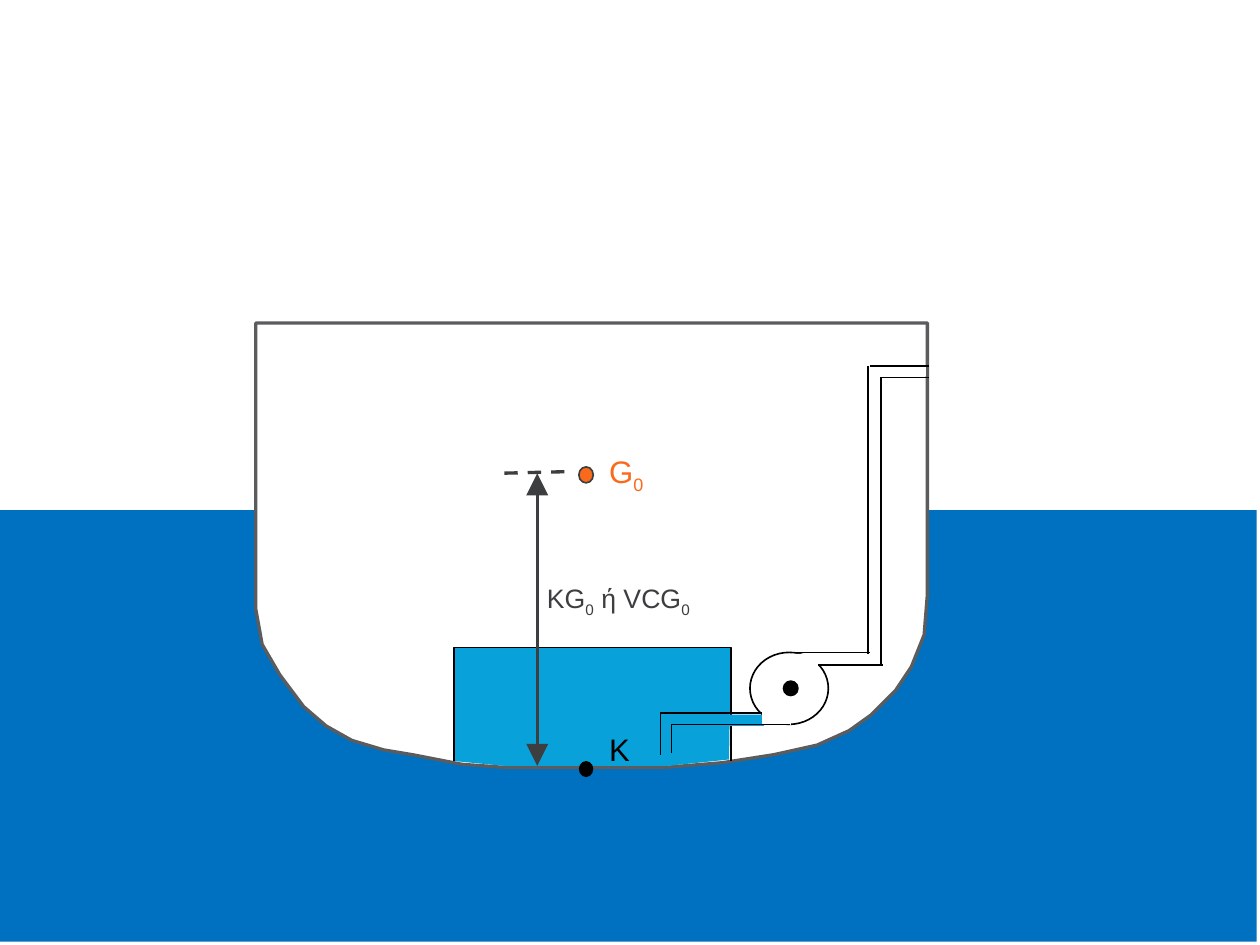
from lxml import etree
from pptx import Presentation
from pptx.dml.color import RGBColor
from pptx.enum import dml, shapes, text
from pptx.oxml import ns
from pptx.util import Inches, Pt

SEA = RGBColor(0x00, 0x70, 0xC0)
BALLAST = RGBColor(0x08, 0xA1, 0xD9)
HULL = RGBColor(0x5B, 0x5C, 0x5E)
DARK = RGBColor(0x3C, 0x3E, 0x3F)
ORANGE = RGBColor(0xF9, 0x6A, 0x1B)
BLACK = RGBColor(0x00, 0x00, 0x00)
WHITE = RGBColor(0xFF, 0xFF, 0xFF)
RECT, OVAL = shapes.MSO_SHAPE.RECTANGLE, shapes.MSO_SHAPE.OVAL

# Outlines, in inches
HULL_POINTS = [
    (1.6, 2.02), (1.6, 3.81), (1.64, 4.03), (1.75, 4.22), (1.9, 4.42), (2.04, 4.54),
    (2.2, 4.63), (2.4, 4.69), (2.58, 4.72), (2.89, 4.78), (3.17, 4.8), (4.15, 4.8),
    (4.52, 4.77), (4.84, 4.72), (5.11, 4.66), (5.31, 4.57), (5.45, 4.47), (5.6, 4.32),
    (5.7, 4.17), (5.78, 3.97), (5.8, 3.72), (5.8, 2.02)]
TANK_WALLS = [(2.84, 4.76), (2.84, 4.05), (4.57, 4.05), (4.57, 4.76)]
TANK_WATER = TANK_WALLS[:3] + [(4.56, 4.75), (4.18, 4.79), (3.15, 4.79)]

# Pump and pipes, back to front: masks cover the lines behind them
PUMP = [
    ("oval", (4.69, 4.08, 0.49, 0.45), WHITE, BLACK),
    ("oval", (4.9, 4.26, 0.09, 0.09), BLACK, BLACK),
    ("rect", (4.3, 4.47, 0.48, 0.07), BALLAST, None),
    ("line", (4.77, 4.46, 4.13, 4.46)),
    ("rect", (4.95, 4.09, 0.57, 0.06), WHITE, WHITE),
    ("line", (5.52, 4.16, 5.07, 4.16)),
    ("rect", (4.93, 4.09, 0.18, 0.12), WHITE, WHITE),
    ("line", (4.2, 4.71, 4.2, 4.53)),
    ("line", (4.13, 4.72, 4.13, 4.46)),
    ("rect", (5.44, 2.3, 0.06, 1.81), WHITE, WHITE),
    ("line", (5.43, 4.09, 5.43, 2.29)),
    ("line", (5.51, 4.16, 5.51, 2.36)),
    ("rect", (5.46, 2.29, 0.33, 0.06), WHITE, WHITE),
    ("line", (5.44, 4.08, 4.94, 4.08)),
    ("rect", (4.77, 4.43, 0.17, 0.1), WHITE, WHITE),
    ("line", (4.94, 4.53, 4.2, 4.53)),
]
OUTLETS = [(5.81, 2.29, 5.44, 2.29), (5.81, 2.36, 5.51, 2.36)]

# Labels as (wording, is subscript)
HEIGHT_LABEL = [("KG", False), ("0", True), (" ή VCG", False), ("0", True)]
GRAVITY_LABEL = [("G", False), ("0", True)]
KEEL_LABEL = [("K", False)]


def paint(shape, fill=None, line=None, width=0.75):
    shape.shadow.inherit = False
    if fill is None:
        shape.fill.background()
    else:
        shape.fill.solid()
        shape.fill.fore_color.rgb = fill
    if line is None:
        shape.line.fill.background()
    else:
        shape.line.color.rgb = line
        shape.line.width = Pt(width)


def add_block(target, kind, place, fill, line=None, width=0.75):
    block = target.add_shape(kind, *map(Inches, place))
    paint(block, fill, line, width)
    return block


def add_outline(target, points, closed=True, **style):
    corners = [(Inches(x), Inches(y)) for x, y in points]
    builder = target.build_freeform(*corners[0], scale=1.0)
    builder.add_line_segments(corners[1:], close=closed)
    paint(builder.convert_to_shape(), **style)


def add_line(target, ends, color=BLACK, width=0.75, dashed=False, arrows=False):
    line = target.add_connector(shapes.MSO_CONNECTOR.STRAIGHT, *map(Inches, ends))
    line.line.color.rgb = color
    line.line.width = Pt(width)
    if dashed:
        line.line.dash_style = dml.MSO_LINE.DASH
    if arrows:
        for end in ("a:headEnd", "a:tailEnd"):
            etree.SubElement(line.line._get_or_add_ln(), ns.qn(end),
                             type="triangle", w="lg", len="lg")
    etree.SubElement(line._element.spPr, ns.qn("a:effectLst"))


def add_label(target, spans, place, size, color, fill=None,
              anchor=text.MSO_ANCHOR.MIDDLE):
    if fill is None:
        box = target.add_textbox(*map(Inches, place))
    else:
        box = add_block(target, RECT, place, fill)
    frame = box.text_frame
    frame.word_wrap = False
    frame.vertical_anchor = anchor
    frame.margin_left = frame.margin_right = frame.margin_top = frame.margin_bottom = 0
    para = frame.paragraphs[0]
    para.alignment = text.PP_ALIGN.LEFT
    para.line_spacing = 0.85
    para.space_before = Pt(0.3 * size)
    for wording, subscript in spans:
        span = para.add_run()
        span.text = wording
        span.font.name = "Arial"
        span.font.size = Pt(size)
        span.font.color.rgb = color
        if subscript:
            span._r.get_or_add_rPr().set("baseline", "-25000")


def main():
    deck = Presentation()
    deck.slide_width, deck.slide_height = Inches(7.88), Inches(5.91)
    page = deck.slides.add_slide(deck.slide_layouts[6]).shapes

    # Sea, hull and ballast tank
    add_block(page, RECT, (0, 3.19, 7.86, 2.7), SEA)
    add_outline(page, HULL_POINTS, fill=WHITE, line=HULL, width=1.5)
    add_outline(page, TANK_WATER, fill=BALLAST)
    add_outline(page, TANK_WALLS, closed=False, line=BLACK)

    # Pump with its pipes
    pump = page.add_group_shape().shapes
    for kind, place, *colors in PUMP:
        if kind == "line":
            add_line(pump, place)
        else:
            width = 0.25 if kind == "rect" else 0.75
            add_block(pump, OVAL if kind == "oval" else RECT, place, *colors, width)

    # Centre of gravity and its height above the keel
    add_block(page, OVAL, (3.62, 2.92, 0.09, 0.1), ORANGE, DARK)
    add_line(page, (3.53, 2.95, 3.12, 2.96), DARK, 1.5, dashed=True)
    add_line(page, (3.36, 4.79, 3.36, 2.96), DARK, 1.5, arrows=True)
    add_label(page, HEIGHT_LABEL, (3.42, 3.56, 1.07, 0.38), 12, DARK, WHITE)
    add_label(page, GRAVITY_LABEL, (3.81, 2.77, 0.47, 0.37), 14, ORANGE, WHITE)

    # Keel point
    add_block(page, OVAL, (3.62, 4.76, 0.09, 0.1), BLACK)
    add_label(page, KEEL_LABEL, (3.81, 4.42, 0.47, 0.38), 14, BLACK,
              anchor=text.MSO_ANCHOR.BOTTOM)

    # Outlet through the ship's side
    for ends in OUTLETS:
        add_line(page, ends)

    deck.save("out.pptx")


if __name__ == "__main__":
    main()
